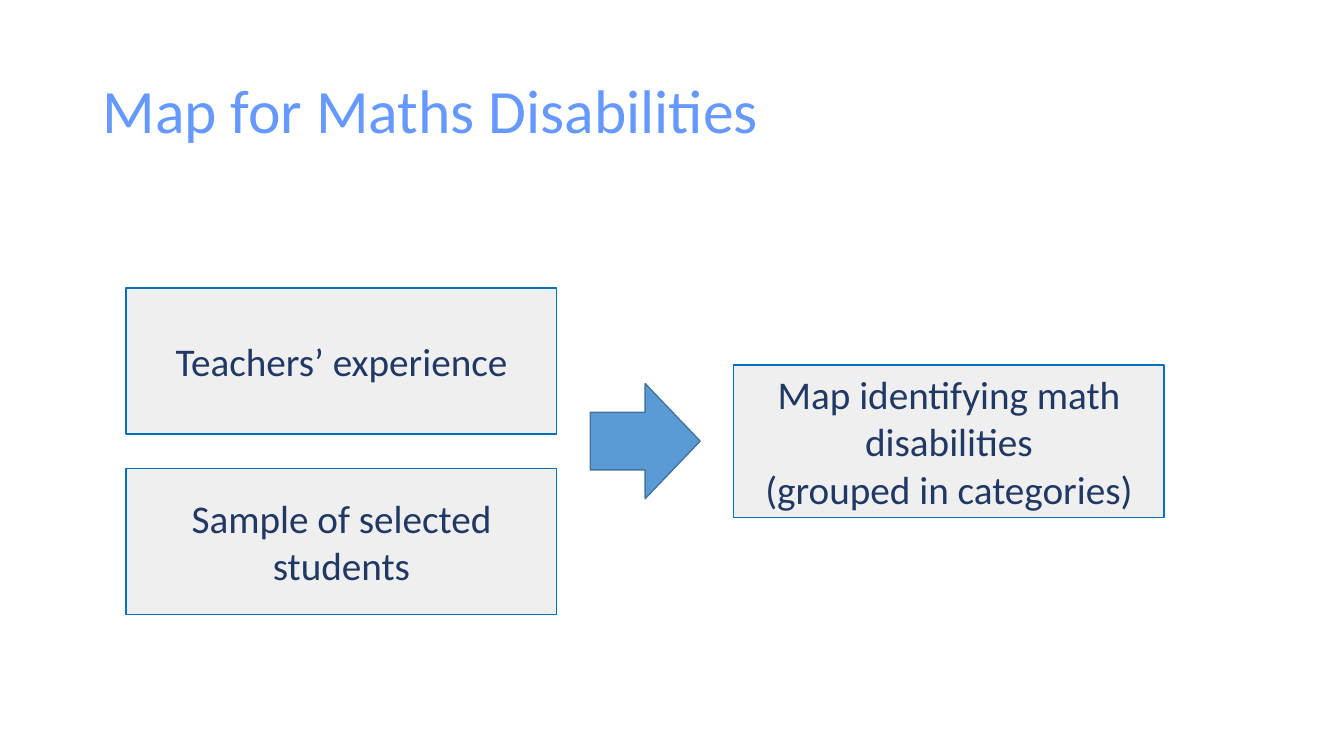
from dataclasses import dataclass

from lxml.etree import SubElement
from pptx import Presentation
from pptx.dml.color import RGBColor as RGB
from pptx.enum.shapes import MSO_SHAPE as SHAPE
from pptx.enum.text import MSO_ANCHOR as ANCHOR, PP_ALIGN as ALIGN
from pptx.oxml.ns import qn
from pptx.util import Cm, Pt


@dataclass(frozen=True)
class Theme:
    font: str = "Calibri"
    title_size: int = 44
    box_size: int = 28
    title: str = "6699FF"
    text: str = "203864"
    box_fill: str = "A5A5A5"
    box_opacity: int = 17
    box_line: str = "0070C0"
    arrow_fill: str = "5B9BD5"
    arrow_line: str = "43739E"


THEME = Theme()


def add_run(p, text, size, color):
    r = p.add_run()
    r.text = text
    r.font.name = THEME.font
    r.font.size = Pt(size)
    r.font.color.rgb = RGB.from_string(color)


def add_shape(s, kind, box, fill, line):
    sp = s.shapes.add_shape(kind, *(Cm(v) for v in box))
    sp.shadow.inherit = False
    sp.fill.solid()
    sp.fill.fore_color.rgb = RGB.from_string(fill)
    sp.line.color.rgb = RGB.from_string(line)
    sp.line.width = Pt(1)
    return sp


def add_title(s, box, text):
    sp = s.shapes.title
    sp.left, sp.top, sp.width, sp.height = (Cm(v) for v in box)
    tf = sp.text_frame
    tf.vertical_anchor = ANCHOR.MIDDLE
    p = tf.paragraphs[0]
    p.alignment = ALIGN.LEFT
    p.line_spacing = 0.9
    add_run(p, text, THEME.title_size, THEME.title)


def add_text_box(s, box, lines):
    """Add a translucent outlined box with one centred paragraph per line."""
    sp = add_shape(s, SHAPE.RECTANGLE, box, THEME.box_fill, THEME.box_line)
    color = sp.fill._xPr.find(qn("a:solidFill"))[0]
    SubElement(color, qn("a:alpha"), val=str(THEME.box_opacity * 1000))
    tf = sp.text_frame
    tf.word_wrap = True
    tf.vertical_anchor = ANCHOR.MIDDLE
    for i, line in enumerate(lines):
        p = tf.add_paragraph() if i else tf.paragraphs[0]
        p.alignment = ALIGN.CENTER
        add_run(p, line, THEME.box_size, THEME.text)


def add_sources(s, box, labels, gap):
    """Stack equal boxes down the given box."""
    left, top, width, height = box
    box_h = (height - gap * (len(labels) - 1)) / len(labels)
    for i, label in enumerate(labels):
        add_text_box(s, (left, top + i * (box_h + gap), width, box_h), [label])


def add_arrow(s, box):
    """Add a down arrow turned to point right."""
    sp = add_shape(s, SHAPE.DOWN_ARROW, box, THEME.arrow_fill, THEME.arrow_line)
    sp.rotation = 270


def main():
    prs = Presentation()
    prs.slide_width, prs.slide_height = Cm(33.87), Cm(19.05)
    s = prs.slides.add_slide(prs.slide_layouts[5])
    add_title(s, (2.33, 1.02, 29.21, 3.68), "Map for Maths Disabilities")
    add_sources(s, (3.18, 7.26, 10.85, 8.23),
                ["Teachers’ experience", "Sample of selected students"], 0.87)
    add_arrow(s, (14.81, 9.73, 2.9, 2.77))
    add_text_box(s, (18.49, 9.2, 10.85, 3.84),
                 ["Map identifying math disabilities", "(grouped in categories)"])
    prs.save("out.pptx")


if __name__ == "__main__":
    main()
